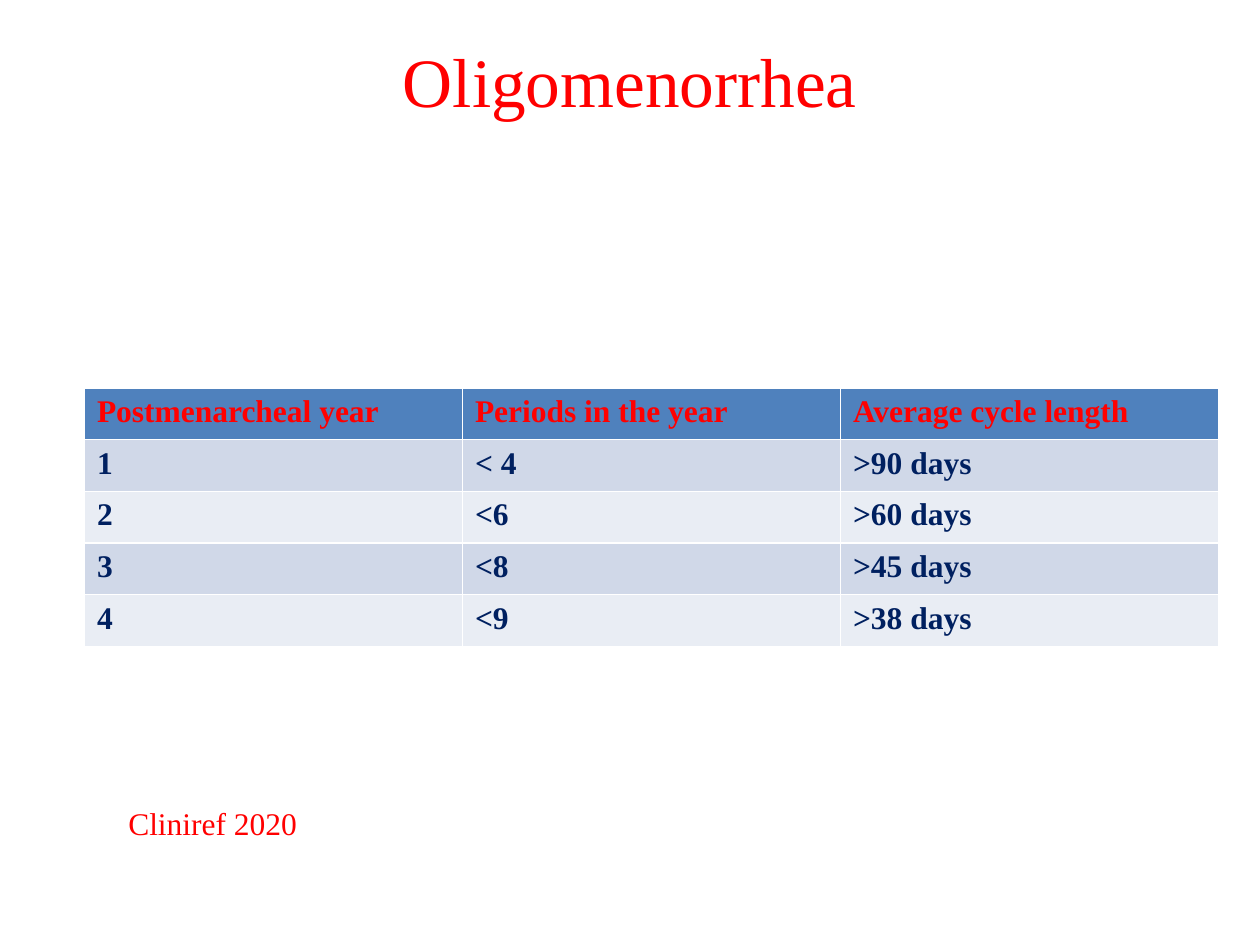
"""Build the oligomenorrhea slide with its table of cycle limits."""
import pptx
import pptx.util
import pptx.dml.color
import pptx.enum.text

Inches = pptx.util.Inches

TITLE = "Oligomenorrhea"
SOURCE = "Cliniref 2020"
ROWS = [
    ("Postmenarcheal year", "Periods in the year", "Average cycle length"),
    ("1", "< 4", ">90 days"),
    ("2", "<6", ">60 days"),
    ("3", "<8", ">45 days"),
    ("4", "<9", ">38 days"),
]
COLORS = {
    "red": "FF0000",
    "navy": "002060",
    "head": "4F81BD",
    "odd": "D0D8E8",
    "even": "E9EDF4",
}
FONT = "Times New Roman"
COL_W, ROW_H = 3, 0.41


def color(name):
    """Return the named colour."""
    return pptx.dml.color.RGBColor.from_string(COLORS[name])


def write(frame, text, size, hue, bold=False):
    """Write one formatted line into a text frame."""
    para = frame.paragraphs[0]
    run = para.add_run()
    run.text = text
    style = {"name": FONT, "size": pptx.util.Pt(size), "bold": bold}
    for key, value in style.items():
        setattr(run.font, key, value)
    run.font.color.rgb = color(hue)
    return para


def add_title(slide):
    """Place and fill the title."""
    title = slide.shapes.title
    place = {"left": 0.5, "top": 0.3, "width": 9, "height": 1.25}
    for key, value in place.items():
        setattr(title, key, Inches(value))
    frame = title.text_frame
    frame.vertical_anchor = pptx.enum.text.MSO_ANCHOR.TOP
    frame.margin_top = 0
    para = write(frame, TITLE, 39.6, "red")
    para.alignment = pptx.enum.text.PP_ALIGN.CENTER


def add_grid(slide):
    """Add the table with a head row and banded body rows."""
    count, width = len(ROWS), len(ROWS[0])
    table = slide.shapes.add_table(
        count, width, Inches(0.67), Inches(3.08),
        Inches(COL_W * width), Inches(ROW_H * count)).table
    for r, row in enumerate(ROWS):
        band = "head" if r == 0 else ("even", "odd")[r % 2]
        hue = "navy" if r else "red"
        for c, text in enumerate(row):
            cell = table.cell(r, c)
            cell.fill.solid()
            cell.fill.fore_color.rgb = color(band)
            write(cell.text_frame, text, 18, hue, True)


def add_source(slide):
    """Add the source line."""
    box = slide.shapes.add_textbox(
        Inches(0.92), Inches(6.33), Inches(1.74), Inches(0.4))
    box.text_frame.word_wrap = False
    box.text_frame.auto_size = pptx.enum.text.MSO_AUTO_SIZE.SHAPE_TO_FIT_TEXT
    write(box.text_frame, SOURCE, 18, "red")


def main():
    """Build and save the deck."""
    deck = pptx.Presentation()
    deck.slide_width, deck.slide_height = Inches(10), Inches(7.5)
    slide = deck.slides.add_slide(deck.slide_layouts.get_by_name("Title Only"))
    add_title(slide)
    add_grid(slide)
    add_source(slide)
    deck.save("out.pptx")


if __name__ == "__main__":
    main()
